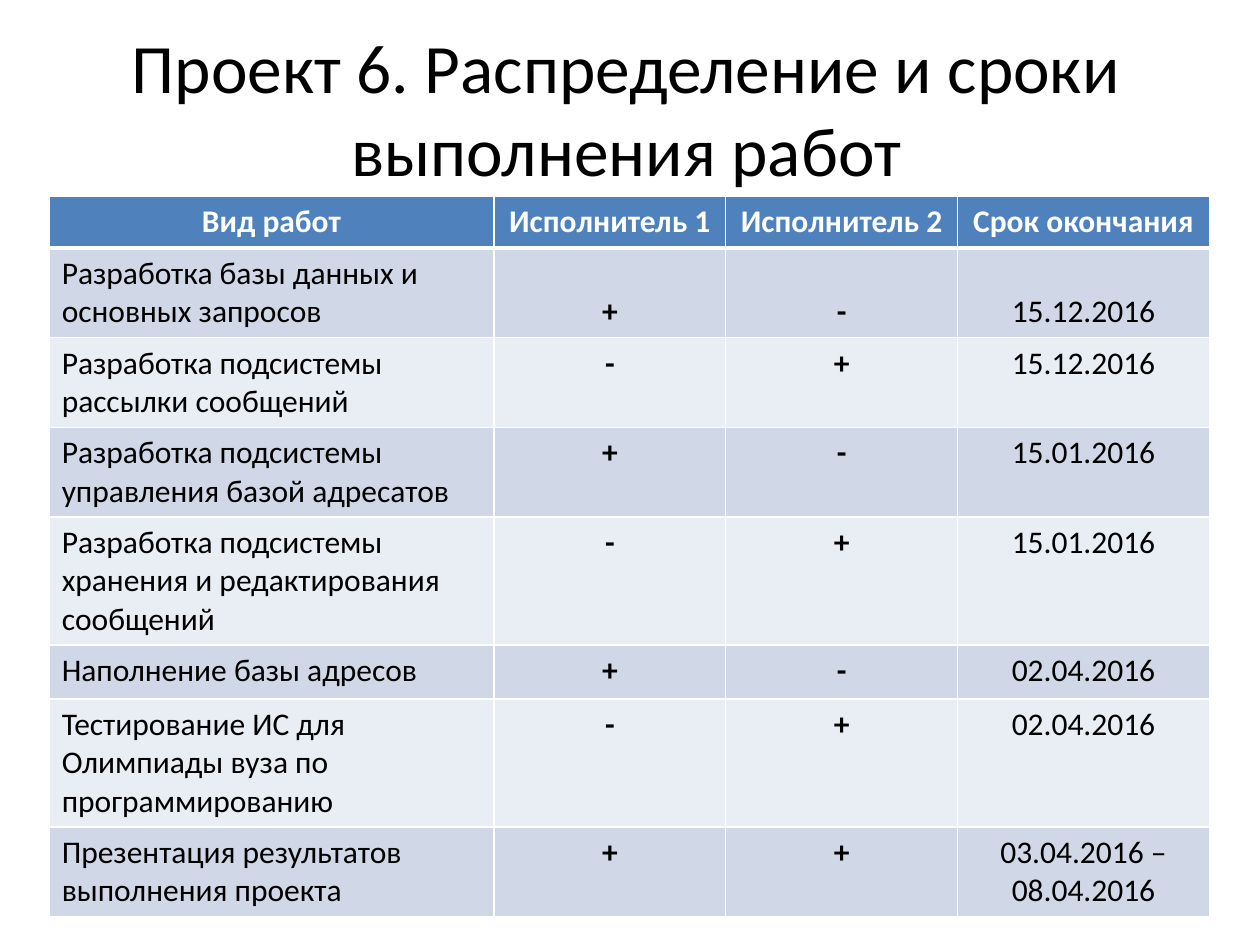
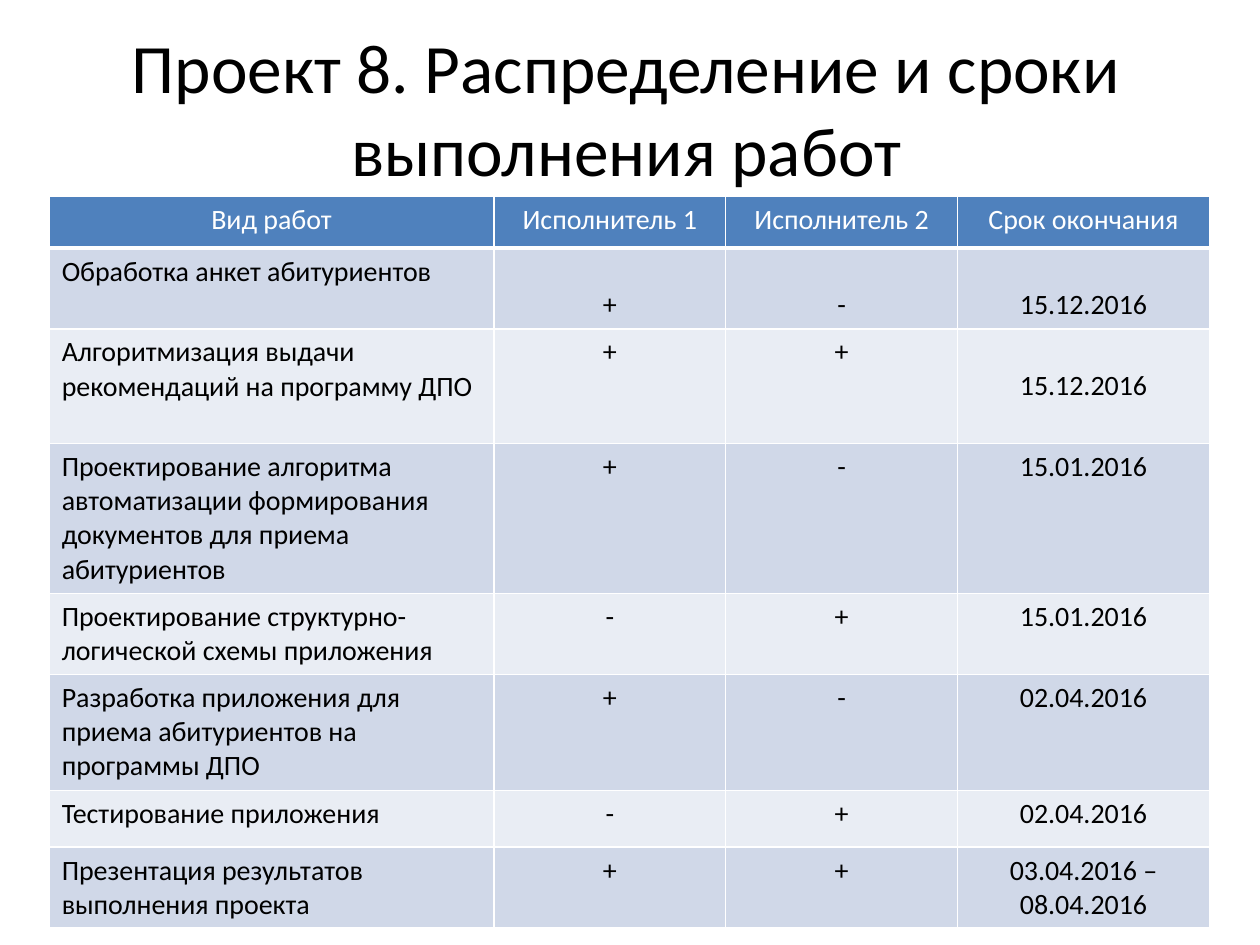
from dataclasses import dataclass

from lxml.etree import SubElement
from pptx import Presentation
from pptx.dml.color import RGBColor
from pptx.enum.text import MSO_ANCHOR as Anchor, MSO_AUTO_SIZE as AutoSize, PP_ALIGN as Align
from pptx.oxml.ns import qn
from pptx.util import Inches, Pt

SLIDE_W, SLIDE_H = Inches(10), Inches(7.5)
COL, ROW = SLIDE_W / 100, SLIDE_H / 75
FONT = "Calibri"
COLORS = {
    "text": "000000",
    "header": "4F81BD",
    "header_text": "FFFFFF",
    "border": "FFFFFF",
    "odd": "D0D8E8",
    "even": "E9EDF4",
}
TITLE_BOX = (4.7, 2.3, 90, 12.5)
TABLE_LEFT, TABLE_TOP = 3.9, 15.6
TABLE_COLS = (35.3, 18.4, 18.4, 20)
HEADER_ROWS = 4.1
HEADINGS = ("Вид работ", "Исполнитель 1", "Исполнитель 2", "Срок окончания")


@dataclass(frozen=True)
class Task:
    name: str
    first: str
    second: str
    due: str
    rows: float
    mark_anchor: Anchor = Anchor.TOP
    due_anchor: Anchor = Anchor.TOP


@dataclass(frozen=True)
class Plan:
    number: int
    size: int
    bold: bool
    tasks: tuple[Task, ...]


BOTTOM, MIDDLE = Anchor.BOTTOM, Anchor.MIDDLE
FINAL_TASK = ("Презентация результатов выполнения проекта", "+", "+", "03.04.2016 – 08.04.2016")
PLANS = (
    Plan(6, 18, True, (
        Task("Разработка базы данных и основных запросов", "+", "-", "15.12.2016", 7, BOTTOM, BOTTOM),
        Task("Разработка подсистемы рассылки сообщений", "-", "+", "15.12.2016", 7),
        Task("Разработка подсистемы управления базой адресатов", "+", "-", "15.01.2016", 7),
        Task("Разработка подсистемы хранения и редактирования сообщений", "-", "+", "15.01.2016", 10),
        Task("Наполнение базы адресов", "+", "-", "02.04.2016", 4.3),
        Task("Тестирование ИС для Олимпиады вуза по программированию", "-", "+", "02.04.2016", 10),
        Task(*FINAL_TASK, 7),
    )),
    Plan(8, 16, False, (
        Task("Обработка анкет абитуриентов", "+", "-", "15.12.2016", 6.4, BOTTOM, BOTTOM),
        Task("Алгоритмизация выдачи рекомендаций на программу ДПО", "+", "+", "15.12.2016", 9.1,
             due_anchor=MIDDLE),
        Task("Проектирование алгоритма автоматизации формирования документов для приема абитуриентов",
             "+", "-", "15.01.2016", 11.9),
        Task("Проектирование структурно-логической схемы приложения", "-", "+", "15.01.2016", 6.4),
        Task("Разработка приложения для приема абитуриентов на программы ДПО",
             "+", "-", "02.04.2016", 9.2),
        Task("Тестирование приложения", "-", "+", "02.04.2016", 4.5),
        Task(*FINAL_TASK, 6.4),
    )),
)


def cols(n: float) -> int:
    return round(n * COL)


def rows(n: float) -> int:
    return round(n * ROW)


def write(tf, text: str, *, size: float, color: str = "text", bold: bool = False,
          align: Align = Align.CENTER) -> None:
    p = tf.paragraphs[0]
    p.alignment = align
    r = p.add_run()
    r.text = text
    r.font.name, r.font.size, r.font.bold = FONT, Pt(size), bold
    r.font.color.rgb = RGBColor.from_string(COLORS[color])


def add_border(cell, side: str, width: float) -> None:
    ln = SubElement(cell._tc.get_or_add_tcPr(), qn(f"a:ln{side}"), w=str(Pt(width)))
    fill = SubElement(ln, qn("a:solidFill"))
    SubElement(fill, qn("a:srgbClr"), val=COLORS["border"])


def style_cell(cell, fill: str, *, top: float = 1, bottom: float = 1,
               anchor: Anchor = Anchor.TOP) -> None:
    for side, width in (("L", 1), ("R", 1), ("T", top), ("B", bottom)):
        add_border(cell, side, width)
    cell.fill.solid()
    cell.fill.fore_color.rgb = RGBColor.from_string(COLORS[fill])
    cell.vertical_anchor = anchor


def add_title(s, text: str) -> None:
    sp = s.shapes.title
    left, top, width, height = TITLE_BOX
    sp.left, sp.top, sp.width, sp.height = cols(left), rows(top), cols(width), rows(height)
    tf = sp.text_frame
    tf.word_wrap, tf.auto_size, tf.vertical_anchor = True, AutoSize.NONE, Anchor.MIDDLE
    write(tf, text, size=39.6)


def add_plan_table(s, plan: Plan) -> None:
    heights = (HEADER_ROWS, *(task.rows for task in plan.tasks))
    table = s.shapes.add_table(len(heights), len(TABLE_COLS), cols(TABLE_LEFT), rows(TABLE_TOP),
                               cols(sum(TABLE_COLS)), rows(sum(heights))).table
    for column, width in zip(table.columns, TABLE_COLS):
        column.width = cols(width)
    for row, height in zip(table.rows, heights):
        row.height = rows(height)

    for cell, heading in zip(table.rows[0].cells, HEADINGS):
        style_cell(cell, "header", bottom=3)
        write(cell.text_frame, heading, size=plan.size, color="header_text", bold=plan.bold)

    for i, task in enumerate(plan.tasks, 1):
        values = (
            (task.name, Align.LEFT, False, Anchor.TOP),
            (task.first, Align.CENTER, plan.bold, task.mark_anchor),
            (task.second, Align.CENTER, plan.bold, task.mark_anchor),
            (task.due, Align.CENTER, False, task.due_anchor),
        )
        for cell, (text, align, bold, anchor) in zip(table.rows[i].cells, values):
            style_cell(cell, "odd" if i % 2 else "even", top=3 if i == 1 else 1, anchor=anchor)
            write(cell.text_frame, text, size=plan.size, bold=bold, align=align)


def main() -> None:
    prs = Presentation()
    prs.slide_width, prs.slide_height = SLIDE_W, SLIDE_H
    for plan in PLANS:
        s = prs.slides.add_slide(prs.slide_layouts[5])
        add_title(s, f"Проект {plan.number}. Распределение и сроки выполнения работ")
        add_plan_table(s, plan)
    prs.save("out.pptx")


if __name__ == "__main__":
    main()
